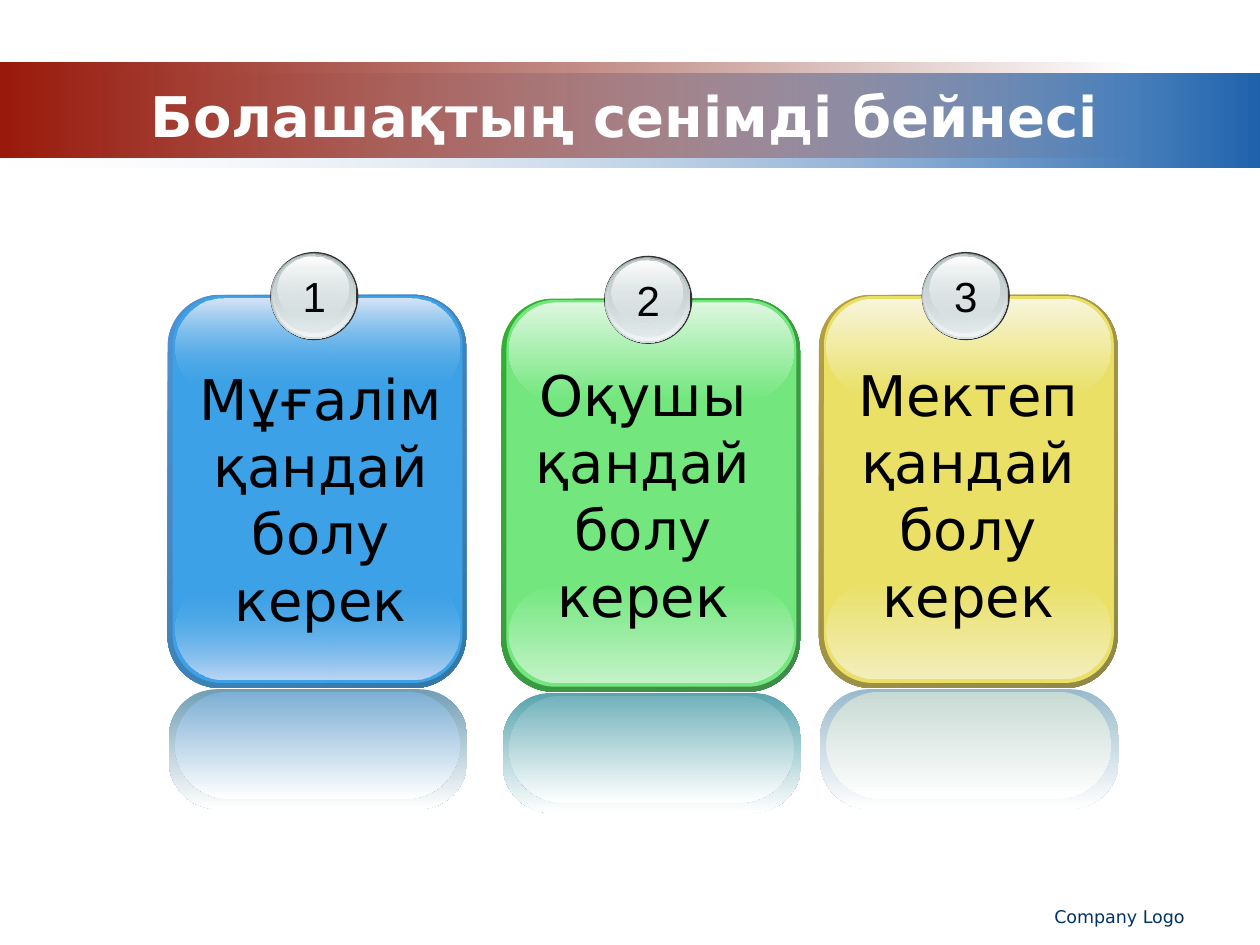
import pptx
import pptx.util
from lxml import etree
from pptx.dml.color import RGBColor
from pptx.enum.shapes import MSO_SHAPE
from pptx.enum.text import MSO_ANCHOR, MSO_AUTO_SIZE, PP_ALIGN
from pptx.oxml.ns import qn

WHITE = RGBColor(0xFF, 0xFF, 0xFF)
BLACK = RGBColor(0x00, 0x00, 0x00)
NAVY = RGBColor(0x00, 0x33, 0x66)
PALE = RGBColor(0xF1, 0xF2, 0xF7)
BLUE = RGBColor(0x1F, 0x63, 0xAD)
RED = RGBColor(0x99, 0x19, 0x0B)
DARK_RED = RGBColor(0x6D, 0x12, 0x08)
CHARCOAL = RGBColor(0x33, 0x33, 0x33)
STEEL = RGBColor(0x99, 0xA1, 0xA2)
SILVER = RGBColor(0xC1, 0xCB, 0xCC)
MIST = RGBColor(0xD6, 0xE1, 0xE2)
FROST = RGBColor(0xF2, 0xF5, 0xF5)

deck = pptx.Presentation()
deck.slide_width = pptx.util.Inches(10)
deck.slide_height = pptx.util.Inches(7.5)
COL = deck.slide_width / 100
ROW = deck.slide_height / 75
slide = deck.slides.add_slide(deck.slide_layouts[5])


def add_panel(parent, kind, box, colors, angle=90, opacity=(100, 100), corner=None):
    """Draw a borderless shape; box is in grid columns and rows."""
    x, y, w, h = box
    panel = parent.add_shape(kind, int(x * COL), int(y * ROW), int(w * COL), int(h * ROW))
    panel.shadow.inherit = False
    panel.line.fill.background()
    if corner is not None:
        panel.adjustments[0] = corner
    if len(colors) == 1:
        panel.fill.solid()
        panel.fill.fore_color.rgb = colors[0]
        return
    panel.fill.gradient()
    panel.fill.gradient_angle = -angle % 360
    for stop, color, percent, position in zip(panel.fill.gradient_stops, colors, opacity, (0, 1)):
        stop.color.rgb = color
        stop.position = position
    for rgb, percent in zip(panel._element.spPr.iter(qn("a:srgbClr")), opacity):
        if percent < 100:
            etree.SubElement(rgb, qn("a:alpha")).set("val", str(percent * 1000))


def add_label(parent, box, text, size, font, color, align=PP_ALIGN.CENTER, wrap=True):
    x, y, w, h = box
    label = parent.add_textbox(int(x * COL), int(y * ROW), int(w * COL), int(h * ROW))
    label.text_frame.word_wrap = wrap
    label.text_frame.auto_size = MSO_AUTO_SIZE.SHAPE_TO_FIT_TEXT
    paragraph = label.text_frame.paragraphs[0]
    paragraph.text = text
    paragraph.alignment = align
    paragraph.font.size = pptx.util.Pt(size)
    paragraph.font.name = font
    paragraph.font.color.rgb = color


# Header band and footer
add_panel(slide.shapes, MSO_SHAPE.RECTANGLE, (0, 5.8, 100, 7.5), (PALE, BLUE), 0, (0, 100))
add_panel(slide.shapes, MSO_SHAPE.RECTANGLE, (0, 5, 90, 7.5), (RED, DARK_RED), 0, (100, 0))
add_label(slide.shapes, (63.3, 71.4, 31.7, 3), "Company Logo", 10, "DejaVu Sans", NAVY,
          PP_ALIGN.RIGHT)

# Title, brought in front of the band
title = slide.shapes.title
title.left, title.top = int(9.2 * COL), int(6 * ROW)
title.width, title.height = int(80.8 * COL), int(6.2 * ROW)
title.text_frame.text = "Болашақтың сенімді бейнесі"
title.text_frame.vertical_anchor = MSO_ANCHOR.MIDDLE
heading = title.text_frame.paragraphs[0]
heading.alignment = PP_ALIGN.CENTER
heading.font.size = pptx.util.Pt(32)
heading.font.name = "DejaVu Sans"
heading.font.bold = True
heading.font.color.rgb = WHITE
title._element.getparent().append(title._element)

# Cards: left, top, question, its left and top, gloss opacity, then the colours of
# rim (2), face, bottom gloss, top gloss, reflected rim, reflected face
cards = [
    (13.3, 23.4, "Мұғалім қандай болу керек", 14.2, 28.4, 0,
     "4E91D4 3477A4 3CA1E6 BDD6F3 D7E5F7 729EB4 7DAFD4"),
    (39.8, 23.7, "Оқушы қандай болу керек", 39.8, 28.1, 100,
     "34B034 3F8B4A 73E77E C3F2C7 DDF7DF 58A4AE 72B2BB"),
    (65, 23.4, "Мектеп қандай болу керек", 65.6, 28.1, 100,
     "B59F43 8F8849 E9E065 F3EEBB F8F5DB 99BACC C8DAD4"),
]
# Badge layers: offset from the card, size, colours, opacity
badge = [
    (8.15, -3.4, 7, 7, (CHARCOAL,), (100, 100)),
    (8.2, -3.3, 6.8, 6.8, (STEEL, MIST), (100, 100)),
    (8.3, -3.3, 6.6, 6.6, (MIST, FROST), (0, 100)),
    (8.4, -3.2, 6.3, 6.2, (SILVER, MIST), (100, 48)),
    (8.75, -3, 5.6, 5, (WHITE, MIST), (100, 38)),
]

for number, (left, top, question, text_left, text_top, gloss, palette) in enumerate(cards, 1):
    rim, rim_end, face, low_gloss, high_gloss, echo_rim, echo = map(
        RGBColor.from_string, palette.split())
    card = slide.shapes.add_group_shape().shapes

    # Body, glosses and reflection
    for dx, dy, w, h, corner, colors, angle, opacity in [
        (0, 0, 23.7, 31.2, 0.175, (rim, rim_end), 45, (100, 100)),
        (0.4, 0.1, 23, 30.7, 0.167, (face,), 90, (100, 100)),
        (0.6, 22.7, 22.6, 7.8, 0.5, (face, low_gloss), 90, (gloss, 100)),
        (0.6, 0.3, 22.6, 7.7, 0.5, (high_gloss, face), 90, (100, gloss)),
        (0.1, 31.3, 23.7, 9.5, 0.404, (echo_rim, WHITE), 90, (100, 100)),
        (0.6, 31.5, 22.6, 8.5, 0.5, (echo, WHITE), 90, (100, 100)),
    ]:
        add_panel(card, MSO_SHAPE.ROUNDED_RECTANGLE, (left + dx, top + dy, w, h),
                  colors, angle, opacity, corner)

    # Numbered badge
    for dx, dy, w, h, colors, opacity in badge:
        add_panel(card, MSO_SHAPE.OVAL, (left + dx, top + dy, w, h), colors, 90, opacity)
    add_label(card, (left + 9.7, top - 2.4, 3.9, 5), str(number), 24, "Arial", BLACK, wrap=False)

    add_label(card, (text_left, text_top, 22.5, 22.6), question, 32, "DejaVu Sans", BLACK)

deck.save("out.pptx")
